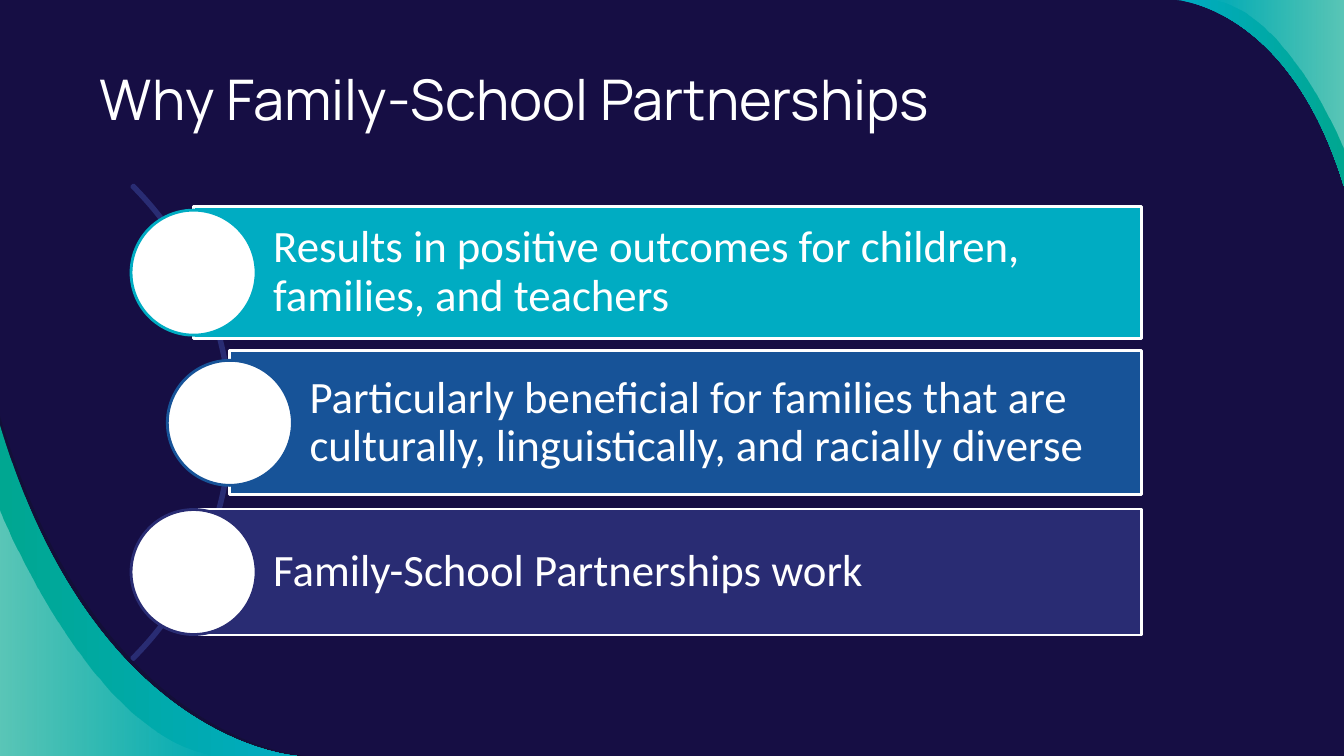
from lxml.etree import SubElement
from pptx import Presentation
from pptx.dml.color import RGBColor
from pptx.enum.shapes import MSO_SHAPE as Shape
from pptx.enum.text import MSO_ANCHOR as Anchor, MSO_AUTO_SIZE as AutoSize, PP_ALIGN as Align
from pptx.oxml.ns import qn
from pptx.util import Inches, Pt

TITLE = "Why Family-School Partnerships"
# text, colour, left of bar, top of bar, height of bar
REASONS = [
    ("Results in positive outcomes for children, families, and teachers", "cyan", 1.92, 2.05, 1.31),
    ("Particularly beneficial for families that are culturally, linguistically, and racially diverse",
     "blue", 2.28, 3.48, 1.43),
    ("Family-School Partnerships work", "indigo", 1.92, 5.05, 1.25),
]
COLORS = {
    "background": "160E44", "shade": "12102F", "white": "FFFFFF",
    "cyan": "00ACC2", "green": "00A791", "blue": "175398", "indigo": "292C73",
}
WIDTH, HEIGHT = 13.33, 7.5
BAR_RIGHT = 11.32
CIRCLE = 1.24
ARC_CENTER, ARC_RADIUS = (-1.03, 4.19), 3.33
BOTTOM_LEFT, TOP_RIGHT = (0, HEIGHT), (WIDTH, 0)
# four Bezier points, corner, (colour, opacity %) from left to right
CORNER_CURVES = [
    ([(0, 4.13), (0.98, 7.39), (3.03, 7.5), (3.03, 7.5)], BOTTOM_LEFT, [("shade", 54)]),
    ([(0, 4.22), (0.95, 7.39), (2.95, 7.5), (2.95, 7.5)], BOTTOM_LEFT, [("green", 100), ("cyan", 100)]),
    ([(0, 5.06), (0, 5.06), (0.91, 7.35), (2.16, 7.5)], BOTTOM_LEFT, [("white", 36), ("white", 0)]),
    ([(11.67, 0), (11.67, 0), (12.79, 0.06), (13.33, 1.85)], TOP_RIGHT, [("cyan", 100), ("green", 100)]),
    ([(12.01, 0), (12.77, 0.09), (13.33, 1.49), (13.33, 1.49)], TOP_RIGHT, [("white", 0), ("white", 36)]),
]


def rgb(name):
    return RGBColor.from_string(COLORS[name])


def bend(shape):
    """Turn the first three straight segments of a freeform into one Bezier curve."""
    outline = shape._element.spPr.find(".//" + qn("a:pathLst"))[0]
    segments = outline.findall(qn("a:lnTo"))[:3]
    curve = SubElement(outline, qn("a:cubicBezTo"))
    segments[0].addprevious(curve)
    for segment in segments:
        curve.append(segment[0])
        outline.remove(segment)


def add_corner(slide, points, corner, stops):
    """Fill the area between a Bezier curve and a slide corner."""
    outline = [tuple(map(Inches, point)) for point in (*points, corner)]
    builder = slide.shapes.build_freeform(*outline[0])
    builder.add_line_segments(outline[1:], close=True)
    shape = builder.convert_to_shape()
    bend(shape)
    shape.shadow.inherit = False
    shape.line.fill.background()
    if len(stops) == 1:
        shape.fill.solid()
        shape.fill.fore_color.rgb = rgb(stops[0][0])
    else:
        shape.fill.gradient()
        shape.fill.gradient_angle = 0
        for stop, (name, _) in zip(shape.fill.gradient_stops, stops):
            stop.color.rgb = rgb(name)
    color_elements = shape._element.spPr.findall(".//" + qn("a:srgbClr"))
    for element, (_, opacity) in zip(color_elements, stops):
        if opacity < 100:
            SubElement(element, qn("a:alpha"), val=str(opacity * 1000))


def add_outlined(slide, kind, box, line, fill=None):
    shape = slide.shapes.add_shape(kind, *map(Inches, box))
    shape.shadow.inherit = False
    shape.line.color.rgb = rgb(line)
    shape.line.width = Pt(2)
    if fill:
        shape.fill.solid()
        shape.fill.fore_color.rgb = rgb(fill)
    else:
        shape.fill.background()
    return shape


def write(shape, text, font, size, insets, line_spacing):
    frame = shape.text_frame
    frame.text = text
    frame.word_wrap = True
    frame.auto_size = AutoSize.NONE
    frame.vertical_anchor = Anchor.MIDDLE
    frame.margin_left, frame.margin_top, frame.margin_right, frame.margin_bottom = map(Inches, insets)
    paragraph = frame.paragraphs[0]
    paragraph.alignment = Align.LEFT
    paragraph.line_spacing = line_spacing
    run_font = paragraph.runs[0].font
    run_font.name, run_font.size = font, Pt(size)
    run_font.color.rgb = rgb("white")


def main():
    presentation = Presentation()
    presentation.slide_width, presentation.slide_height = Inches(WIDTH), Inches(HEIGHT)
    slide = presentation.slides.add_slide(presentation.slide_layouts[5])
    slide.background.fill.solid()
    slide.background.fill.fore_color.rgb = rgb("background")

    for points, corner, stops in CORNER_CURVES:
        add_corner(slide, points, corner, stops)

    title = slide.shapes.title
    title.left, title.top, title.width, title.height = map(Inches, (0.89, 0.51, 10.26, 0.92))
    write(title, TITLE, "Manrope", 40, (0.1,) * 4, 1.0)

    center_x, center_y = ARC_CENTER
    arc_box = (center_x - ARC_RADIUS, center_y - ARC_RADIUS, 2 * ARC_RADIUS, 2 * ARC_RADIUS)
    arc = add_outlined(slide, Shape.BLOCK_ARC, arc_box, "indigo")
    for index, value in enumerate((189, 27, 0.004)):
        arc.adjustments[index] = value

    for text, color, left, top, height in REASONS:
        bar = add_outlined(slide, Shape.RECTANGLE, (left, top, BAR_RIGHT - left, height), "white", color)
        write(bar, text, "Calibri", 32, (0.79, 0.09, 0.09, 0.09), 0.9)
        circle_box = (left - CIRCLE / 2, top + (height - CIRCLE) / 2, CIRCLE, CIRCLE)
        add_outlined(slide, Shape.OVAL, circle_box, color, "white")

    presentation.save("out.pptx")


if __name__ == "__main__":
    main()
